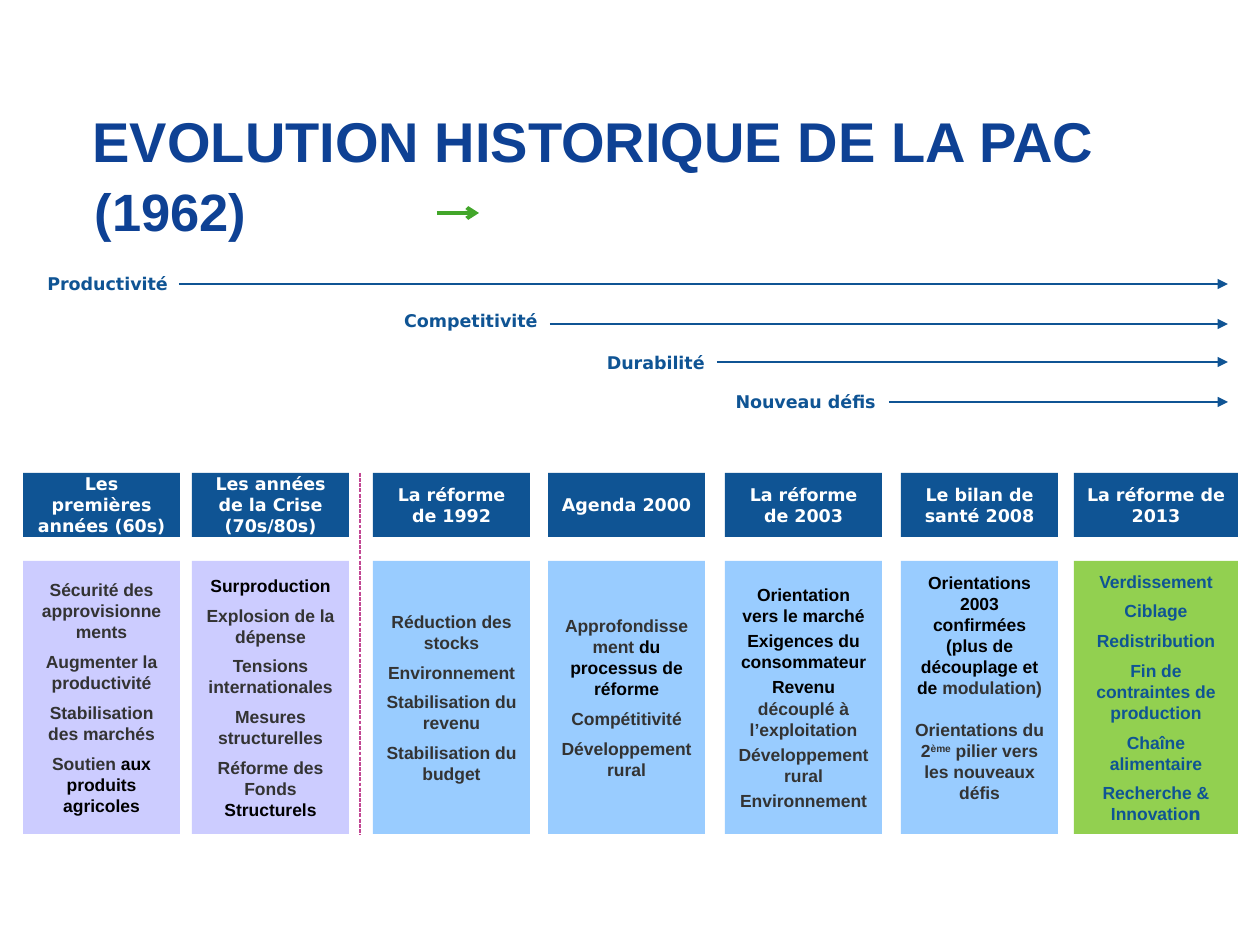
from dataclasses import dataclass

from lxml import etree
from pptx import Presentation
from pptx import util as u
from pptx.dml.color import RGBColor
from pptx.enum import dml, shapes, text
from pptx.oxml.ns import qn

SLIDE_W, SLIDE_H = 1260, 945


@dataclass(frozen=True)
class Theme:
    heading_font: str = "DejaVu Sans"
    body_font: str = "Arial"
    title_size: int = 32
    year_size: int = 30
    text_size: int = 10
    title: str = "0E4194"
    accent: str = "42A62A"
    navy: str = "0F5494"
    divider: str = "C24793"
    white: str = "FFFFFF"
    black: str = "000000"
    grey: str = "333333"
    lilac: str = "CCCCFF"
    sky: str = "99CCFF"
    green: str = "92D050"


T = Theme()
CENTER, RIGHT = text.PP_ALIGN.CENTER, text.PP_ALIGN.RIGHT
MIDDLE, TOP = text.MSO_ANCHOR.MIDDLE, text.MSO_ANCHOR.TOP

# label, label box (x, y, w), alignment, arrow start, arrow y
TRENDS = [
    ("Productivité", (23, 267, 169), CENTER, 179, 284),
    ("Competitivité", (348, 304, 202), RIGHT, 550, 324),
    ("Durabilité", (548, 345, 169), RIGHT, 717, 362),
    ("Nouveau défis", (701, 384, 209), CENTER, 889, 402),
]

# Each point is a list of runs: (text, colour) or (text, colour, font changes)
PERIODS = [
    dict(x=23, heading="Les premières années (60s)", fill=T.lilac, points=[
        [("Sécurité des approvisionnements", T.grey)],
        [("Augmenter la productivité", T.grey)],
        [("Stabilisation des marchés", T.grey)],
        [("Soutien ", T.grey), ("aux produits agricoles", T.black)]]),
    dict(x=192, heading="Les années de la Crise (70s/80s)", fill=T.lilac, points=[
        [("Surproduction", T.black)],
        [("Explosion de la dépense", T.grey)],
        [("Tensions internationales", T.grey)],
        [("Mesures structurelles", T.grey)],
        [("Réforme des Fonds ", T.grey), ("Structurels", T.black)]]),
    dict(x=373, heading="La réforme de 1992", fill=T.sky, points=[
        [("Réduction des stocks", T.grey)],
        [("Environnement", T.grey)],
        [("Stabilisation du revenu", T.grey)],
        [("Stabilisation du budget", T.grey)]]),
    dict(x=548, heading="Agenda 2000", fill=T.sky, points=[
        [("Approfondissement", T.grey), (" du processus de réforme", T.black)],
        [("Compétitivité", T.grey)],
        [("Développement rural", T.grey)]]),
    dict(x=725, heading="La réforme de 2003", fill=T.sky, gap=2.5, points=[
        [("Orientation vers le marché", T.black)],
        [("Exigences du consommateur", T.black)],
        [("Revenu ", T.black), ("découplé à\nl’exploitation", T.grey)],
        [("Développement\nrural", T.grey)],
        [("Environnement", T.grey)]]),
    dict(x=901, heading="Le bilan de santé 2008", fill=T.sky, gap=12, anchor=TOP, points=[
        [("Orientations 2003 confirmées (plus de découplage et de ", T.black),
         ("modulation)", T.grey)],
        [("Orientations du 2", T.grey), ("ème", T.grey, {"baseline": "30000"}),
         (" pilier vers les nouveaux défis", T.grey)]]),
    dict(x=1074, w=164, heading="La réforme de 2013", fill=T.green, points=[
        [("Verdissement", T.navy)],
        [("Ciblage", T.navy)],
        [("Redistribution", T.navy)],
        [("Fin de contraintes de production", T.navy)],
        [("Chaîne alimentaire", T.navy)],
        [("Recherche & Innovatio", T.navy), ("n", T.navy, {"name": T.heading_font})]]),
]


def px(n):
    return u.Emu(round(n * 914400 / 126))


def apply(target, **values):
    for key, value in values.items():
        setattr(target, key, value)


def add_run(paragraph, words, color, changes=None, **font):
    """Add styled words; a newline becomes a line break."""
    changes = dict(changes or {})
    baseline = changes.pop("baseline", None)
    style = dict(name=T.body_font, size=T.text_size, bold=True) | font | changes
    style["size"] = u.Pt(style["size"])
    for i, line in enumerate(words.split("\n")):
        if i:
            paragraph.add_line_break()
        run = paragraph.add_run()
        run.text = line
        apply(run.font, **style)
        run.font.color.rgb = RGBColor.from_string(color)
        if baseline:
            run._r.get_or_add_rPr().set("baseline", baseline)


def write(frame, points, gap=0, align=CENTER, anchor=MIDDLE, **font):
    apply(frame, word_wrap=True, auto_size=text.MSO_AUTO_SIZE.NONE,
          vertical_anchor=anchor)
    for i, runs in enumerate(points):
        paragraph = frame.add_paragraph() if i else frame.paragraphs[0]
        paragraph.alignment = align
        if i and gap:
            paragraph.space_before = u.Pt(gap)
        for run in runs:
            add_run(paragraph, *run, **font)


def add_panel(slide, x, y, w, h, fill):
    panel = slide.shapes.add_shape(shapes.MSO_SHAPE.RECTANGLE, *map(px, (x, y, w, h)))
    panel.shadow.inherit = False
    panel.fill.solid()
    panel.fill.fore_color.rgb = RGBColor.from_string(fill)
    panel.line.fill.background()
    return panel.text_frame


def add_line(slide, start, end, color, width=0.75, head=None, dash=None):
    line = slide.shapes.add_connector(shapes.MSO_CONNECTOR.STRAIGHT,
                                      *map(px, (*start, *end)))
    line.line.color.rgb = RGBColor.from_string(color)
    line.line.width = u.Pt(width)
    if dash:
        line.line.dash_style = dash
    if head:
        etree.SubElement(line.line._get_or_add_ln(), qn("a:tailEnd"), type=head)
    etree.SubElement(line._element.spPr, qn("a:effectLst"))


def add_title(slide, x, y, w, h):
    title = slide.shapes.title
    apply(title, left=px(x), top=px(y), width=px(w), height=px(h))
    write(title.text_frame, [
        [("EVOLUTION HISTORIQUE DE LA PAC\n", T.title, {"size": T.title_size}),
         ("(1962)", T.title, {"size": T.year_size})],
    ], align=text.PP_ALIGN.LEFT, anchor=TOP)
    paragraph = title.text_frame.paragraphs[0]
    paragraph.line_spacing = 1.07
    properties = paragraph._p.get_or_add_pPr()
    properties.set("marL", str(px(49)))
    properties.set("indent", str(px(-2)))
    add_line(slide, (x + 404, y + 117), (x + 446, y + 117), T.accent, 2.25, "arrow")


def add_trend(slide, label, box, align, start, y, end=1228):
    x, top, w = box
    caption = slide.shapes.add_textbox(*map(px, (x, top, w, 34)))
    write(caption.text_frame, [[(label, T.navy)]], align=align, name=T.heading_font)
    add_line(slide, (start, y), (end, y), T.navy, head="triangle")


def add_period(slide, y, x, heading, fill, points, w=157, gap=5, anchor=MIDDLE):
    """Place a heading panel with its list of points below."""
    write(add_panel(slide, x, y, w, 64, T.navy), [[(heading, T.white)]],
          name=T.heading_font)
    body = add_panel(slide, x, y + 88, w, 273, fill)
    if anchor == TOP:
        body.margin_top = px(11)
    write(body, points, gap=gap, anchor=anchor)


def main():
    deck = Presentation()
    apply(deck, slide_width=px(SLIDE_W), slide_height=px(SLIDE_H))
    slide = deck.slides.add_slide(deck.slide_layouts[5])
    add_title(slide, 33, 96, 1192, 89)
    for trend in TRENDS:
        add_trend(slide, *trend)
    for period in PERIODS:
        add_period(slide, 473, **period)
    add_line(slide, (360, 473), (360, 835), T.divider,
             dash=dml.MSO_LINE.SQUARE_DOT)
    deck.save("out.pptx")


if __name__ == "__main__":
    main()
